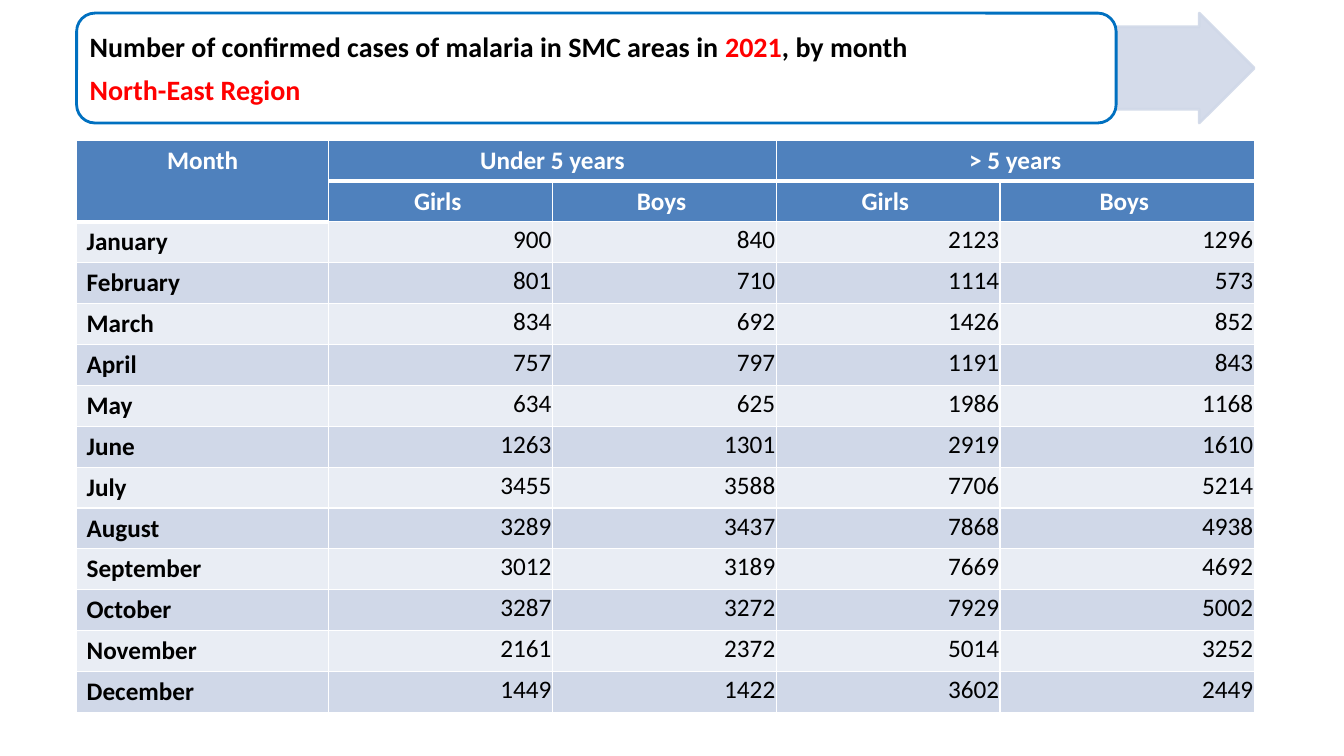
import pptx
import pptx.util
import pptx.oxml
import pptx.oxml.ns
import pptx.dml.color
import pptx.enum.shapes
import pptx.enum.text

Inches = pptx.util.Inches
Pt = pptx.util.Pt
KIND = pptx.enum.shapes.MSO_SHAPE
ALIGN = pptx.enum.text.PP_ALIGN
ANCHOR = pptx.enum.text.MSO_ANCHOR

COLORS = {"head": "4F81BD", "light": "E9EDF4", "band": "D0D8E8", "edge": "0070C0",
          "white": "FFFFFF", "black": "000000", "red": "FF0000"}
TITLE = [
    [("Number of confirmed cases of malaria in SMC areas in ", "black"),
     ("2021", "red"), (", by month", "black")],
    [("North-East Region", "red")],
]
HEADS = [["Month", "Under 5 years", "", "> 5 years", ""],
         ["", "Girls ", "Boys ", "Girls ", "Boys "]]
SPANS = [((0, 0), (1, 0)), ((0, 1), (0, 2)), ((0, 3), (0, 4))]
CASES = [
    ("January", 900, 840, 2123, 1296),
    ("February", 801, 710, 1114, 573),
    ("March", 834, 692, 1426, 852),
    ("April", 757, 797, 1191, 843),
    ("May", 634, 625, 1986, 1168),
    ("June", 1263, 1301, 2919, 1610),
    ("July", 3455, 3588, 7706, 5214),
    ("August", 3289, 3437, 7868, 4938),
    ("September", 3012, 3189, 7669, 4692),
    ("October", 3287, 3272, 7929, 5002),
    ("November", 2161, 2372, 5014, 3252),
    ("December", 1449, 1422, 3602, 2449),
]


def rgb(name):
    return pptx.dml.color.RGBColor.from_string(COLORS[name])


def inset(frame, left, top, right, bottom):
    frame.margin_left, frame.margin_top = Inches(left), Inches(top)
    frame.margin_right, frame.margin_bottom = Inches(right), Inches(bottom)


class Page:
    font = "Calibri"

    def __init__(self, deck):
        self.slide = deck.slides.add_slide(deck.slide_layouts[5])

    def style(self, para, size, bold, align):
        para.font.name, para.font.size, para.font.bold = self.font, Pt(size), bold
        para.alignment = align

    def shape(self, kind, box, fill, line, alpha=None):
        """Draw a preset shape; alpha is the opacity in percent."""
        item = self.slide.shapes.add_shape(kind, *map(Inches, box))
        item.shadow.inherit = False
        item.fill.solid()
        item.fill.fore_color.rgb = rgb(fill)
        item.line.color.rgb = rgb(line)
        item.line.width = Pt(2)
        if alpha:
            for color in item._element.spPr.iter(pptx.oxml.ns.qn("a:srgbClr")):
                node = pptx.oxml.parse_xml(
                    f'<a:alpha {pptx.oxml.ns.nsdecls("a")} val="{alpha * 1000}"/>')
                color.append(node)
        return item

    def title(self, box, lines):
        item = self.slide.shapes.title
        self.slide.shapes._spTree.append(item._element)  # bring to the front
        item.left, item.top, item.width, item.height = map(Inches, box)
        frame = item.text_frame
        frame.word_wrap = True
        frame.auto_size = pptx.enum.text.MSO_AUTO_SIZE.NONE
        frame.vertical_anchor = ANCHOR.MIDDLE
        inset(frame, 0.08, 0.04, 0.08, 0.04)
        for i, parts in enumerate(lines):
            para = frame.add_paragraph() if i else frame.paragraphs[0]
            self.style(para, 20, True, ALIGN.LEFT)
            para.space_before, para.space_after = Pt(0), Pt(7)
            for text, color in parts:
                run = para.add_run()
                run.text = text
                run.font.color.rgb = rgb(color)

    def border(self, cell, base):
        """Give a cell white borders, with a bottom line of base points."""
        props = cell._tc.get_or_add_tcPr()
        for i, side in enumerate("LRTB"):
            width = Pt(base if side == "B" else 1)
            props.insert(i, pptx.oxml.parse_xml(
                f'<a:ln{side} {pptx.oxml.ns.nsdecls("a")} w="{width}"><a:solidFill>'
                f'<a:srgbClr val="{COLORS["white"]}"/></a:solidFill></a:ln{side}>'))

    def cell(self, cell, text, fill, color, bold, align, base=1):
        cell.fill.solid()
        cell.fill.fore_color.rgb = rgb(fill)
        para = cell.text_frame.paragraphs[0]
        para.text = text
        self.style(para, 18, bold, align)
        para.font.color.rgb = rgb(color)
        self.border(cell, base)

    def table(self, left, top, widths, height):
        count = len(HEADS) + len(CASES)
        table = self.slide.shapes.add_table(
            count, len(widths), Inches(left), Inches(top),
            Inches(sum(widths)), Inches(height * count)).table
        table.horz_banding = False
        for col, width in zip(table.columns, widths):
            col.width = Inches(width)
        for row in table.rows:
            row.height = Inches(height)
        for r, heads in enumerate(HEADS):
            for c, text in enumerate(heads):
                self.cell(table.cell(r, c), text, "head", "white", True, ALIGN.CENTER,
                          1 if r else 3)
        for start, end in SPANS:
            table.cell(*start).merge(table.cell(*end))
        for r, values in enumerate(CASES, len(HEADS)):
            fill = "band" if r % 2 else "light"
            for c, value in enumerate(values):
                cell = table.cell(r, c)
                self.cell(cell, str(value), fill, "black", c == 0,
                          ALIGN.RIGHT if c else ALIGN.LEFT)
                if c:
                    cell.vertical_anchor = ANCHOR.MIDDLE
                    inset(cell, 0.01, 0.01, 0.01, 0.05)


def main():
    deck = pptx.Presentation()
    deck.slide_width, deck.slide_height = Inches(13.33), Inches(7.5)
    page = Page(deck)
    page.table(0.76, 1.39, [2.5, 2.22, 2.22, 2.22, 2.52], 0.4)
    arrow = page.shape(KIND.RIGHT_ARROW, (11.07, 0.13, 1.37, 1.09), "band", "band", 90)
    arrow.adjustments[0] = 0.75
    page.shape(KIND.ROUNDED_RECTANGLE, (0.76, 0.13, 10.31, 1.09), "white", "edge")
    page.title((0.81, 0.18, 10.2, 0.98), TITLE)
    deck.save("out.pptx")


if __name__ == "__main__":
    main()
